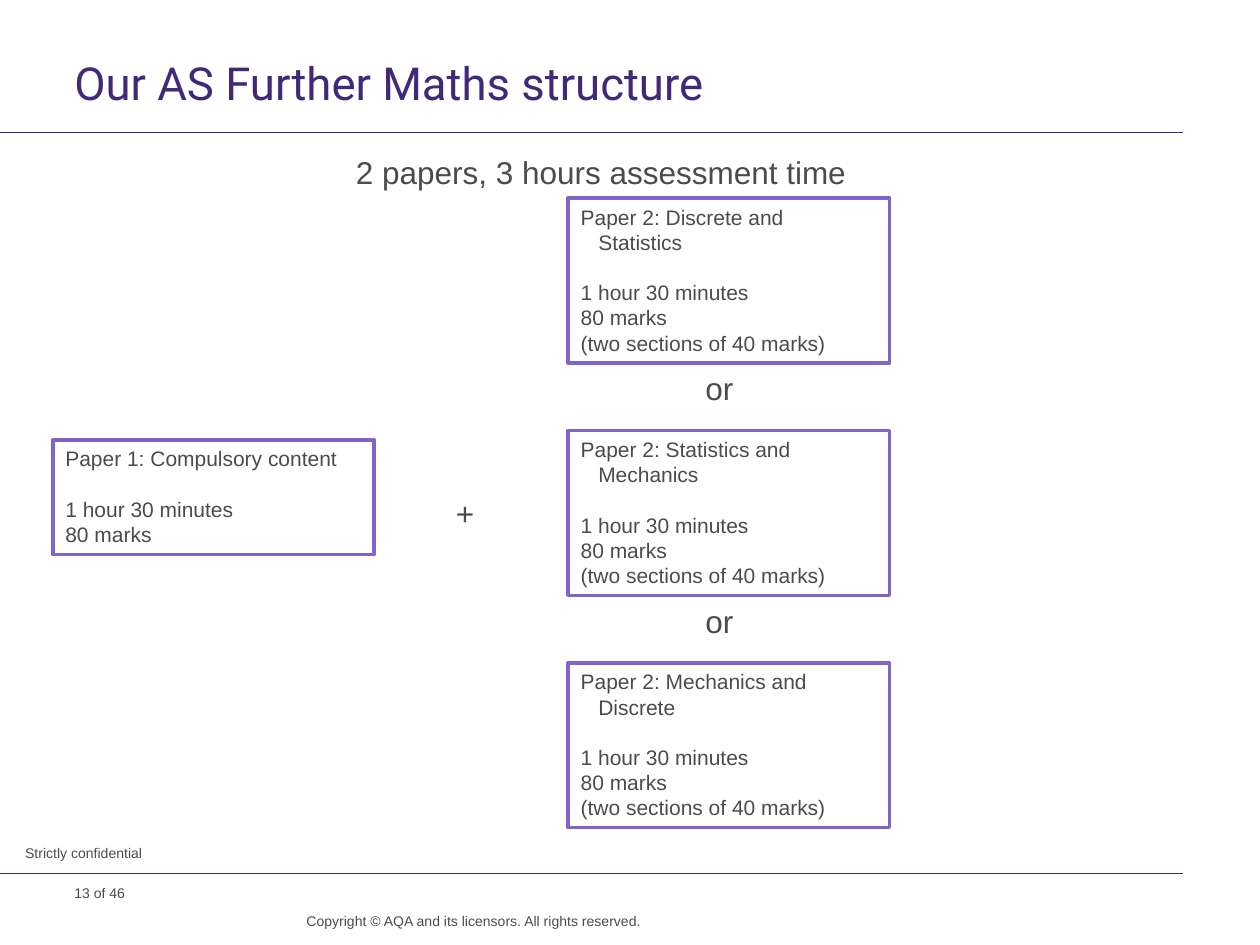
from dataclasses import dataclass

from pptx import Presentation
from pptx import util as u
from pptx.dml import color
from pptx.enum import shapes, text
from pptx.oxml import xmlchemy


@dataclass(frozen=True)
class Theme:
    ink: str = "4B4B4B"
    heading: str = "412878"
    border: str = "8262CB"
    body_font: str = "Arial"
    title_font: str = "Roboto"
    title: float = 26
    lead: float = 18
    detail: float = 12
    small: float = 8
    detail_line: float = 14.4
    rule_width: float = 0.6
    border_width: float = 2


class SlideBuilder:
    COLUMNS, ROWS = 100, 75

    def __init__(self, deck, theme):
        self.theme = theme
        self.cell_width = deck.slide_width / self.COLUMNS
        self.cell_height = deck.slide_height / self.ROWS
        self.slide = deck.slides.add_slide(deck.slide_layouts[6])

    def place(self, column, row, columns, rows):
        return [u.Emu(round(cells * size)) for cells, size in (
            (column, self.cell_width), (row, self.cell_height),
            (columns, self.cell_width), (rows, self.cell_height))]

    def fill_para(self, para, wording, size, font=None, ink=None, **layout):
        span = para.add_run()
        span.text = wording
        formats = {"name": font or self.theme.body_font, "size": u.Pt(size)}
        for name, value in formats.items():
            setattr(span.font, name, value)
        span.font.color.rgb = color.RGBColor.from_string(ink or self.theme.ink)
        for name, value in layout.items():
            setattr(para, name, value)

    def label(self, at, wording, size, inset=True, **formats):
        frame = self.slide.shapes.add_textbox(*self.place(*at)).text_frame
        frame.word_wrap = True
        if not inset:
            for side in ("left", "right", "top", "bottom"):
                setattr(frame, f"margin_{side}", 0)
        self.fill_para(frame.paragraphs[0], wording, size, **formats)

    def rule(self, row, end):
        left, top, width, _ = self.place(0, row, end, 0)
        line = self.slide.shapes.add_connector(
            shapes.MSO_CONNECTOR.STRAIGHT, left, top, left + width, top)
        line.line.color.rgb = color.RGBColor.from_string(self.theme.heading)
        line.line.width = u.Pt(self.theme.rule_width)
        properties = line._element.spPr
        properties.append(xmlchemy.OxmlElement("a:effectLst"))

    def paper(self, at, heading, details, continuation=None):
        box = self.slide.shapes.add_shape(
            shapes.MSO_SHAPE.RECTANGLE, *self.place(*at))
        box.shadow.inherit = False
        box.fill.background()
        box.line.color.rgb = color.RGBColor.from_string(self.theme.border)
        box.line.width = u.Pt(self.theme.border_width)
        frame = box.text_frame
        frame.word_wrap = True
        frame.vertical_anchor = text.MSO_ANCHOR.TOP
        headings = [heading] + ([continuation] if continuation else [])
        spacing = u.Pt(self.theme.detail_line)
        for index, wording in enumerate(headings + details):
            para = frame.paragraphs[0] if index == 0 else frame.add_paragraph()
            if wording == continuation:
                para._p.get_or_add_pPr().set("marL", str(u.Inches(0.14)))
            self.fill_para(para, wording, self.theme.detail,
                           alignment=text.PP_ALIGN.LEFT, line_spacing=spacing,
                           space_before=spacing if index == len(headings) else 0)


def main():
    deck = Presentation()
    deck.slide_width, deck.slide_height = u.Inches(10), u.Inches(7.5)
    theme = Theme()
    page = SlideBuilder(deck, theme)

    for row in (10.5, 69.3):
        page.rule(row, 93.9)
    page.label((5.9, 4.8, 88, 4.7), "Our AS Further Maths structure",
               theme.title, inset=False, font=theme.title_font,
               ink=theme.heading, line_spacing=u.Pt(28))
    page.label((4.2, 12.4, 87, 3.3), "2 papers, 3 hours assessment time",
               theme.lead, inset=False, alignment=text.PP_ALIGN.CENTER,
               line_spacing=u.Pt(20))

    timing = ["1 hour 30 minutes", "80 marks"]
    page.paper((4.2, 34.9, 25.5, 9.1), "Paper 1: Compulsory content", timing)
    page.label((35.2, 38.7, 3, 4), "+", theme.lead)

    options = [("Discrete", "Statistics"), ("Statistics", "Mechanics"),
               ("Mechanics", "Discrete")]
    height, step = 13.1, 18.45
    for index, (first, second) in enumerate(options):
        top = 15.7 + index * step
        page.paper((45.1, top, 25.5, height), f"Paper 2: {first} and",
                   timing + ["(two sections of 40 marks)"], second)
        if index < len(options) - 1:
            page.label((55, top + height, 5.6, 4), "or", theme.lead)

    page.label((5.9, 70.2, 15.7, 1.3), "13 of 46", theme.small, inset=False)
    footers = [
        ((1.9, 67, 9.4, 1.5), "Strictly confidential"),
        ((21.6, 72.4, 29.3, 2.6),
         "Copyright © AQA and its licensors. All rights reserved."),
    ]
    for at, wording in footers:
        page.label(at, wording, theme.small, inset=False,
                   alignment=text.PP_ALIGN.RIGHT, line_spacing=u.Pt(10))

    deck.save("out.pptx")


if __name__ == "__main__":
    main()
